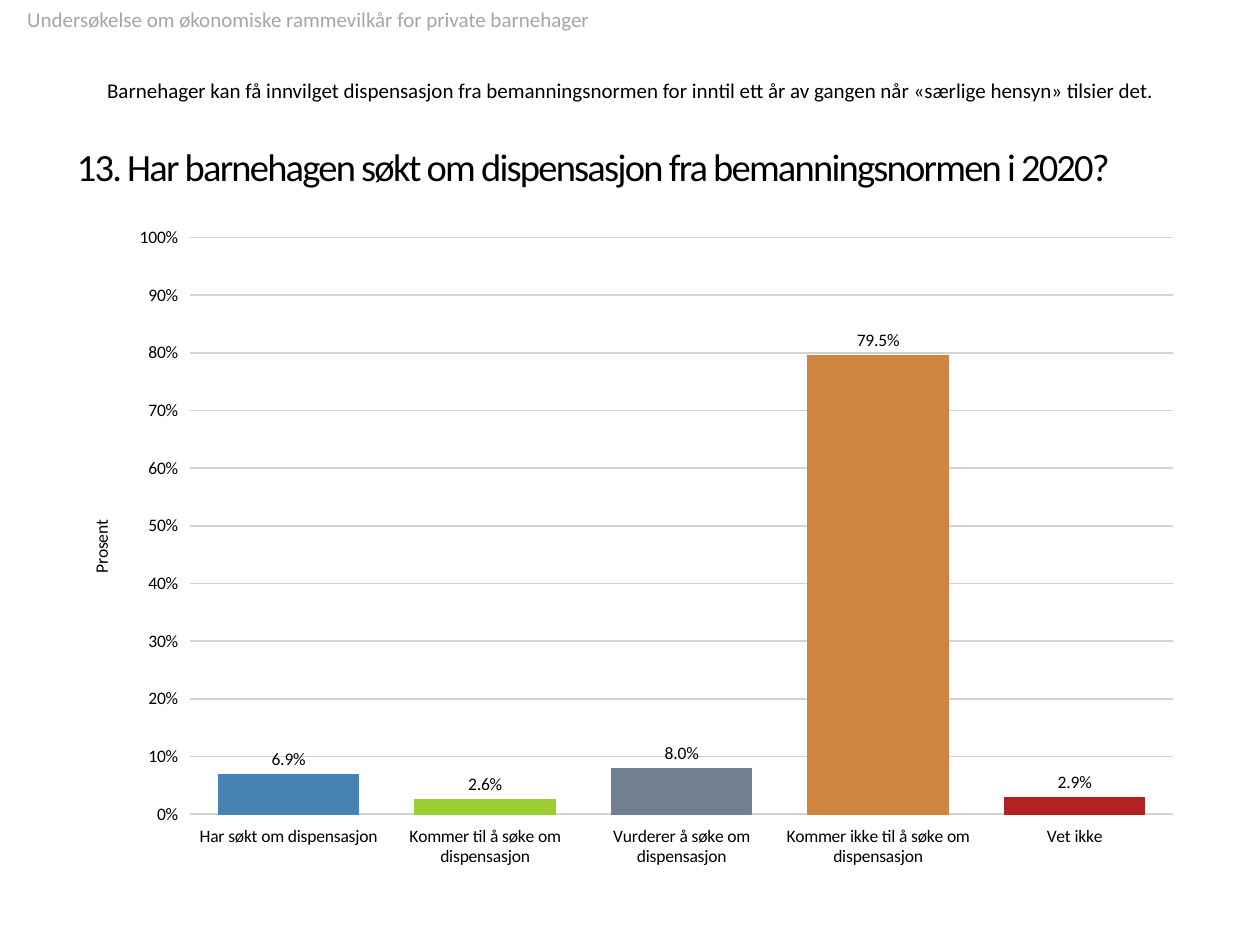
from pptx import Presentation
from pptx.chart.data import CategoryChartData
from pptx.dml.color import RGBColor
from pptx.enum.chart import XL_CHART_TYPE, XL_LABEL_POSITION, XL_TICK_MARK
from pptx.enum.text import MSO_ANCHOR
from pptx.util import Cm, Pt

BLACK = RGBColor(0, 0, 0)
GREY = RGBColor(0xA6, 0xA6, 0xA6)
GRID = RGBColor(0xD3, 0xD3, 0xD3)
BLUE = RGBColor(0x46, 0x82, 0xB4)
GREEN = RGBColor(0x9A, 0xCD, 0x32)
SLATE = RGBColor(0x70, 0x80, 0x90)
ORANGE = RGBColor(0xCD, 0x85, 0x3F)
RED = RGBColor(0xB2, 0x22, 0x22)
FONT = "Calibri"

SURVEY = "Undersøkelse om økonomiske rammevilkår for private barnehager"
INTRO = ("Barnehager kan få innvilget dispensasjon fra bemanningsnormen "
         "for inntil ett år av gangen når «særlige hensyn» tilsier det.")
QUESTION = "13. Har barnehagen søkt om dispensasjon fra bemanningsnormen i 2020?"
ANSWERS = [
    ("Har søkt om dispensasjon", 0.069, BLUE),
    ("Kommer til å søke om dispensasjon", 0.026, GREEN),
    ("Vurderer å søke om dispensasjon", 0.08, SLATE),
    ("Kommer ikke til å søke om dispensasjon", 0.795, ORANGE),
    ("Vet ikke", 0.029, RED),
]
LEFT, WIDTH = 1.3, 22.8


def style_font(font, size, color=BLACK):
    font.name = FONT
    font.size = Pt(size)
    font.bold = False
    font.color.rgb = color


def add_text(slide, text, box, size=12, color=BLACK, anchor=MSO_ANCHOR.MIDDLE,
             indent=0, bottom=0.13, spacing=0):
    frame = slide.shapes.add_textbox(*map(Cm, box)).text_frame
    frame.word_wrap = True
    frame.vertical_anchor = anchor
    frame.margin_bottom = Cm(bottom)
    paragraph = frame.paragraphs[0]
    paragraph._p.get_or_add_pPr().set("marL", str(Cm(indent)))
    run = paragraph.add_run()
    run.text = text
    style_font(run.font, size, color)
    if spacing:
        run.font._element.set("spc", str(spacing * 100))


def add_answer_chart(slide):
    answers = CategoryChartData(number_format="0.0%")
    answers.categories = [label for label, _, _ in ANSWERS]
    answers.add_series("Series 1", [share for _, share, _ in ANSWERS])
    chart = slide.shapes.add_chart(
        XL_CHART_TYPE.COLUMN_CLUSTERED,
        Cm(LEFT), Cm(4.32), Cm(WIDTH), Cm(13.41), answers).chart
    chart.has_title = False
    chart.has_legend = False
    style_font(chart.font, 18)

    for axis in (chart.category_axis, chart.value_axis):
        style_font(axis.tick_labels.font, 10)
        axis.major_tick_mark = XL_TICK_MARK.CROSS
        axis.format.line.fill.background()

    percent = chart.value_axis
    percent.minimum_scale, percent.maximum_scale = 0, 1
    percent.major_unit = 0.1
    percent.tick_labels.number_format = "0%"
    percent.tick_labels.number_format_is_linked = False
    percent.major_gridlines.format.line.color.rgb = GRID
    percent.major_gridlines.format.line.width = Pt(1)
    axis_title = percent.axis_title.text_frame
    axis_title.text = "Prosent"
    style_font(axis_title.paragraphs[0].runs[0].font, 10)

    plot = chart.plots[0]
    plot.gap_width = 40
    plot.vary_by_categories = False
    plot.has_data_labels = True
    labels = plot.data_labels
    labels.show_value = True
    labels.number_format = "0.0%"
    labels.number_format_is_linked = False
    labels.position = XL_LABEL_POSITION.OUTSIDE_END
    style_font(labels.font, 10)

    shares = plot.series[0]
    shares.format.fill.solid()
    shares.format.fill.fore_color.rgb = BLUE
    for index, (_, _, color) in enumerate(ANSWERS):
        column = shares.points[index].format
        column.fill.solid()
        column.fill.fore_color.rgb = color
        column.line.color.rgb = color
        column.line.width = Pt(0.75)


def main():
    deck = Presentation()
    deck.slide_width, deck.slide_height = Cm(25.4), Cm(19.05)
    slide = deck.slides.add_slide(deck.slide_layouts[6])
    add_text(slide, QUESTION, (LEFT, 2.59, WIDTH, 1.52), size=22, spacing=-1)
    add_text(slide, INTRO, (LEFT, 0.61, WIDTH, 1.8),
             anchor=MSO_ANCHOR.BOTTOM, indent=0.61, bottom=0.34)
    add_text(slide, SURVEY, (0, 0, 25.4, 0.64), color=GREY,
             anchor=MSO_ANCHOR.TOP, indent=0.3)
    add_answer_chart(slide)
    deck.save("out.pptx")


if __name__ == "__main__":
    main()
